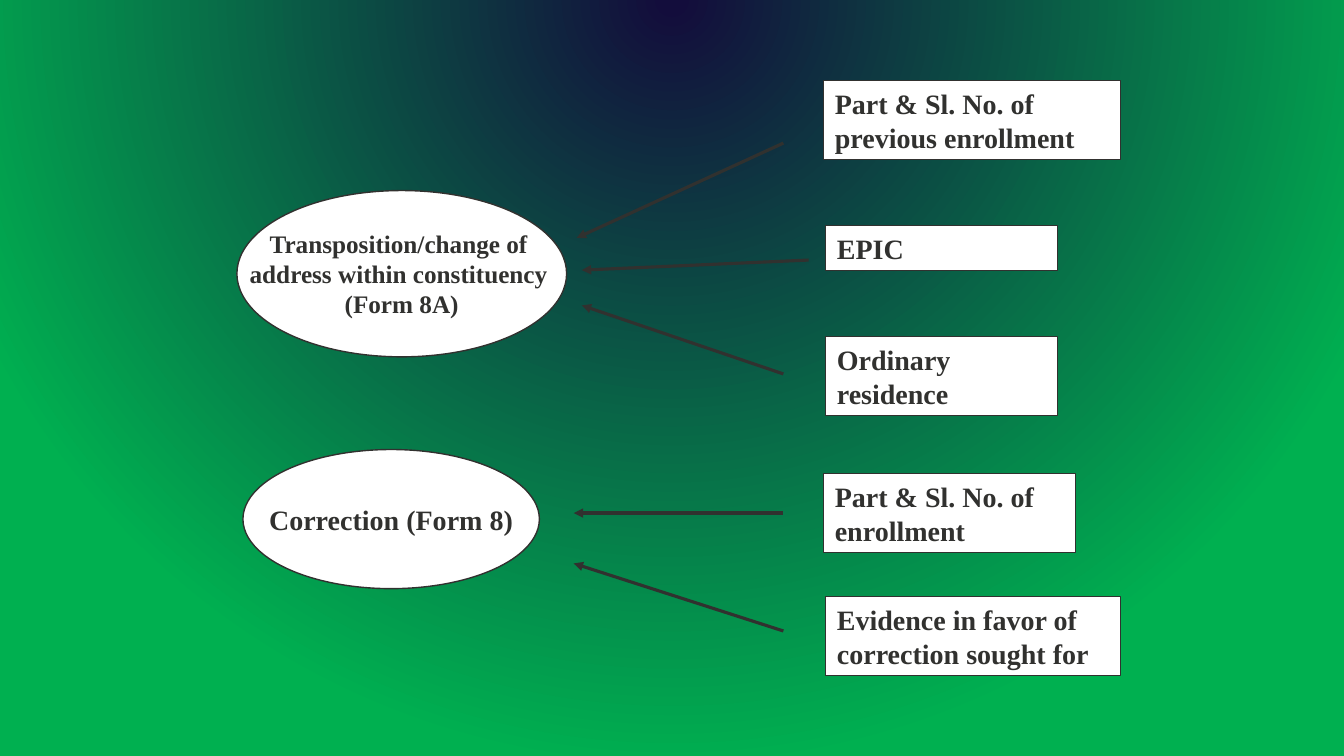
from dataclasses import dataclass

from lxml import etree
from pptx import Presentation
from pptx import util as u
from pptx.dml.color import RGBColor
from pptx.enum import shapes, text
from pptx.oxml import parse_xml
from pptx.oxml.ns import nsdecls, qn

EMU_PER_PX = 9144  # 100 px to the inch
FONT = "Times New Roman"
COLOURS = {"ink": "31312F", "paper": "FFFFFF", "night": "130D3C", "green": "00B050"}


@dataclass(frozen=True)
class Form:
    """An ellipse naming an application form."""
    left: int
    top: int
    width: int
    height: int
    lines: tuple[str, ...]
    size: int


@dataclass(frozen=True)
class Requirement:
    """A box naming a detail that a form asks for."""
    left: int
    top: int
    width: int
    height: int
    label: str


@dataclass(frozen=True)
class Arrow:
    """A line whose arrowhead sits at its tip, near a form."""
    tip_x: int
    tip_y: int
    tail_x: int
    tail_y: int


FORMS = (
    Form(235, 189, 327, 165,
         ("Transposition/change of ", "address within constituency ", "(Form 8A)"), 18),
    Form(241, 446, 294, 138, ("Correction (Form 8)",), 20),
)
ARROWS = (
    Arrow(572, 236, 777, 142),
    Arrow(577, 268, 802, 258),
    Arrow(577, 303, 777, 371),
    Arrow(569, 509, 777, 509),
    Arrow(569, 559, 777, 626),
)
REQUIREMENTS = (
    Requirement(817, 80, 294, 78, "Part & Sl. No. of previous enrollment"),
    Requirement(819, 224, 230, 44, "EPIC"),
    Requirement(819, 334, 230, 78, "Ordinary residence"),
    Requirement(817, 470, 250, 78, "Part & Sl. No. of enrollment"),
    Requirement(819, 592, 292, 78, "Evidence in favor of correction sought for"),
)


def px(length: int) -> u.Emu:
    return u.Emu(length * EMU_PER_PX)


def colour(name: str) -> RGBColor:
    return RGBColor.from_string(COLOURS[name])


def paint_background(slide) -> None:
    """Fill the background with a circular gradient centred above the slide."""
    slide.background.fill.solid()
    solid = slide.background.fill._xPr.find(qn("a:solidFill"))
    gradient = parse_xml(
        f'<a:gradFill {nsdecls("a")} rotWithShape="1"><a:gsLst>'
        f'<a:gs pos="1000"><a:srgbClr val="{COLOURS["night"]}">'
        '<a:alpha val="76000"/></a:srgbClr></a:gs>'
        f'<a:gs pos="100000"><a:srgbClr val="{COLOURS["green"]}"/></a:gs>'
        '</a:gsLst><a:path path="circle">'
        '<a:fillToRect l="50000" t="-80000" r="50000" b="180000"/>'
        '</a:path></a:gradFill>'
    )
    solid.getparent().replace(solid, gradient)


def add_outlined_shape(slide, kind, item: Form | Requirement, line_width: float):
    shape = slide.shapes.add_shape(
        kind, px(item.left), px(item.top), px(item.width), px(item.height))
    shape.shadow.inherit = False
    shape.fill.solid()
    shape.fill.fore_color.rgb = colour("paper")
    shape.line.color.rgb = colour("ink")
    shape.line.width = u.Pt(line_width)
    frame = shape.text_frame
    frame.margin_left = frame.margin_right = px(11)
    frame.margin_top = frame.margin_bottom = px(6)
    return shape


def write_line(paragraph, words: str, size: int, alignment) -> None:
    paragraph.alignment = alignment
    run = paragraph.add_run()
    run.text = words
    run.font.name = FONT
    run.font.size = u.Pt(size)
    run.font.bold = True
    run.font.color.rgb = colour("ink")


def add_form(slide, form: Form) -> None:
    shape = add_outlined_shape(slide, shapes.MSO_SHAPE.OVAL, form, 1)
    frame = shape.text_frame
    frame.word_wrap = False
    frame.vertical_anchor = text.MSO_ANCHOR.MIDDLE
    for index, line in enumerate(form.lines):
        paragraph = frame.add_paragraph() if index else frame.paragraphs[0]
        write_line(paragraph, line, form.size, text.PP_ALIGN.CENTER)


def add_requirement(slide, requirement: Requirement) -> None:
    shape = add_outlined_shape(slide, shapes.MSO_SHAPE.RECTANGLE, requirement, 0.75)
    frame = shape.text_frame
    frame.word_wrap = True
    frame.auto_size = text.MSO_AUTO_SIZE.SHAPE_TO_FIT_TEXT
    frame.vertical_anchor = text.MSO_ANCHOR.TOP
    write_line(frame.paragraphs[0], requirement.label, 20, text.PP_ALIGN.LEFT)


def add_arrow(slide, arrow: Arrow) -> None:
    connector = slide.shapes.add_connector(
        shapes.MSO_CONNECTOR.STRAIGHT,
        px(arrow.tip_x), px(arrow.tip_y), px(arrow.tail_x), px(arrow.tail_y))
    connector.line.color.rgb = colour("ink")
    connector.line.width = u.Pt(2.25)
    properties = connector._element.spPr
    etree.SubElement(properties.find(qn("a:ln")), qn("a:headEnd"), type="triangle")
    etree.SubElement(properties, qn("a:effectLst"))


def main() -> None:
    presentation = Presentation()
    presentation.slide_width = px(1333)
    presentation.slide_height = px(750)
    slide = presentation.slides.add_slide(presentation.slide_layouts[6])
    paint_background(slide)
    for form in FORMS:
        add_form(slide, form)
    for arrow in ARROWS:
        add_arrow(slide, arrow)
    for requirement in REQUIREMENTS:
        add_requirement(slide, requirement)
    presentation.save("out.pptx")


if __name__ == "__main__":
    main()
